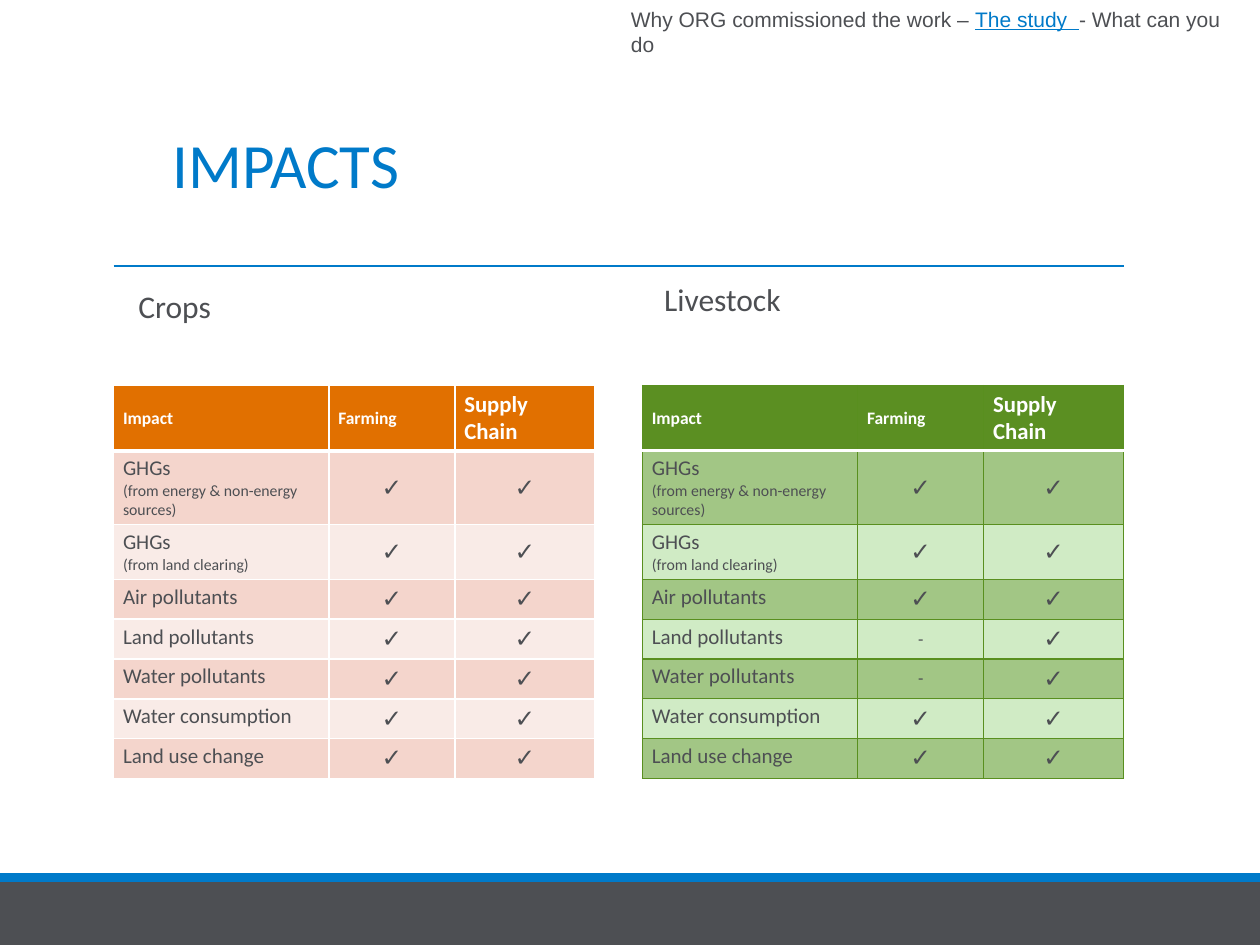
import dataclasses
import typing

import lxml.etree
import pptx
import pptx.dml.color
import pptx.enum.shapes
import pptx.enum.text
import pptx.oxml.ns
import pptx.util

Cm = pptx.util.Cm
Pt = pptx.util.Pt
qn = pptx.oxml.ns.qn

COLORS = {
    "white": "FFFFFF", "text": "4D4F53", "blue": "007AC9",
    "orange": "E17000", "peach": "F4D5CC", "pale_peach": "F9EBE7",
    "green": "5B8F22", "green_line": "598F1F",
    "sage": "A2C685", "pale_green": "D0EBC5",
}
HEADERS = ("Impact", "Farming", "Supply Chain")
IMPACTS = (
    "GHGs\n(from energy & non-energy sources)",
    "GHGs\n(from land clearing)",
    "Air pollutants",
    "Land pollutants",
    "Water pollutants",
    "Water consumption",
    "Land use change",
)
COL_WIDTHS = (4.34, 2.54, 2.82)
ROW_HEIGHTS = (0.76, 1.45, 1.07) + (0.76,) * 5
TABLE_TOP = 7.77


@dataclasses.dataclass
class Run:
    text: str
    size: float
    color: str = "text"
    font: str = "Calibri"
    underline: bool = False


@dataclasses.dataclass
class Label:
    left: float
    top: float
    width: float
    height: float
    runs: list[Run]
    inset: tuple[float, float] = (0.25, 0.13)
    line_spacing: float = 1.0
    wrap: bool = True


@dataclasses.dataclass
class ImpactTable:
    left: float
    header: str
    bands: tuple[str, str]
    border: str
    border_width: float
    header_rule: float
    farming_gaps: tuple[str, ...] = ()


LABELS = [
    Label(2.51, 5.72, 10.29, 2.06, [Run("Crops", 18)], (0.28, 0.15), 0.9),
    Label(13.11, 5.59, 10.29, 2.06, [Run("Livestock", 18)], (0.28, 0.15), 0.9),
    Label(3.23, 2.41, 11.2, 1.8, [Run("IMPACTS", 36, "blue")]),
    Label(12.47, 0, 12.93, 0.76, [
        Run("Why ORG commissioned the work – ", 12, font="Arial"),
        Run("The study  ", 12, "blue", "Arial", True),
        Run("- What can you do", 12, font="Arial"),
    ], wrap=False),
]
TABLES = [
    ImpactTable(2.29, "orange", ("peach", "pale_peach"), "white", 1, 3),
    ImpactTable(12.95, "green", ("sage", "pale_green"), "green_line", 0.75, 2,
                ("Land pollutants", "Water pollutants")),
]


def rgb(name: str) -> pptx.dml.color.RGBColor:
    return pptx.dml.color.RGBColor.from_string(COLORS[name])


def style_run(r: typing.Any, size: float, color: str, font: str = "Calibri") -> None:
    r.font.size = Pt(size)
    r.font.name = font
    r.font.color.rgb = rgb(color)


def add_bar(s: typing.Any, top: float, height: float, color: str) -> None:
    sp = s.shapes.add_shape(pptx.enum.shapes.MSO_SHAPE.RECTANGLE,
                            0, Cm(top), Cm(25.4), Cm(height))
    sp.shadow.inherit = False
    sp.fill.solid()
    sp.fill.fore_color.rgb = rgb(color)
    sp.line.fill.background()


def add_label(s: typing.Any, label: Label) -> None:
    sp = s.shapes.add_textbox(Cm(label.left), Cm(label.top),
                              Cm(label.width), Cm(label.height))
    tf = sp.text_frame
    tf.word_wrap = label.wrap
    tf.margin_left = tf.margin_right = Cm(label.inset[0])
    tf.margin_top = tf.margin_bottom = Cm(label.inset[1])
    p = tf.paragraphs[0]
    p.line_spacing = label.line_spacing
    for run in label.runs:
        r = p.add_run()
        r.text = run.text
        style_run(r, run.size, run.color, run.font)
        r.font.underline = run.underline


def set_border(cell: typing.Any, side: str, color: str, width: float) -> None:
    tc_pr = cell._tc.get_or_add_tcPr()
    ln = lxml.etree.SubElement(tc_pr, qn(f"a:ln{side}"), w=str(Pt(width)))
    fill = lxml.etree.SubElement(ln, qn("a:solidFill"))
    lxml.etree.SubElement(fill, qn("a:srgbClr"), val=COLORS[color])


def fill_cell(cell: typing.Any, text: str, row: int, col: int, t: ImpactTable) -> None:
    for side in "LRTB":
        if (row, side) in ((0, "B"), (1, "T")):
            set_border(cell, side, "white", t.header_rule)
        else:
            set_border(cell, side, t.border, t.border_width)
    cell.fill.solid()
    cell.fill.fore_color.rgb = rgb(t.bands[(row - 1) % 2] if row else t.header)
    cell.margin_left = cell.margin_right = Cm(0.19)
    cell.margin_top = cell.margin_bottom = Cm(0.1)
    if row == 0 or col > 0:
        cell.vertical_anchor = pptx.enum.text.MSO_ANCHOR.MIDDLE
    cell.text_frame.text = text
    for i, p in enumerate(cell.text_frame.paragraphs):
        if row == 0:
            size = 13 if col == 2 else 10
        elif col == 0:
            size = 9 if i else 12
        else:
            size = 14 if text == "✓" else 10
            p.alignment = pptx.enum.text.PP_ALIGN.CENTER
        r = p.runs[0]
        style_run(r, size, "text" if row else "white")
        r.font.bold = row == 0


def add_impact_table(s: typing.Any, t: ImpactTable) -> None:
    rows = [HEADERS] + [
        (impact, "-" if impact in t.farming_gaps else "✓", "✓") for impact in IMPACTS
    ]
    table = s.shapes.add_table(len(rows), len(HEADERS), Cm(t.left), Cm(TABLE_TOP),
                               Cm(sum(COL_WIDTHS)), Cm(sum(ROW_HEIGHTS))).table
    table.first_row = table.horz_banding = False
    for column, width in zip(table.columns, COL_WIDTHS):
        column.width = Cm(width)
    for row, height in zip(table.rows, ROW_HEIGHTS):
        row.height = Cm(height)
    for i, row in enumerate(rows):
        for j, text in enumerate(row):
            fill_cell(table.cell(i, j), text, i, j, t)


def add_rule(s: typing.Any) -> None:
    line = s.shapes.add_connector(pptx.enum.shapes.MSO_CONNECTOR.STRAIGHT,
                                  Cm(2.29), Cm(5.36), Cm(22.66), Cm(5.36))
    line.line.color.rgb = rgb("blue")
    line.line.width = Pt(0.75)
    lxml.etree.SubElement(line._element.spPr, qn("a:effectLst"))


def main() -> None:
    prs = pptx.Presentation()
    prs.slide_width, prs.slide_height = Cm(25.4), Cm(19.05)
    s = prs.slides.add_slide(prs.slide_layouts[6])
    add_bar(s, 17.78, 1.27, "text")
    add_bar(s, 17.6, 0.18, "blue")
    for t in TABLES:
        add_impact_table(s, t)
    add_rule(s)
    for label in LABELS:
        add_label(s, label)
    prs.save("out.pptx")


if __name__ == "__main__":
    main()
